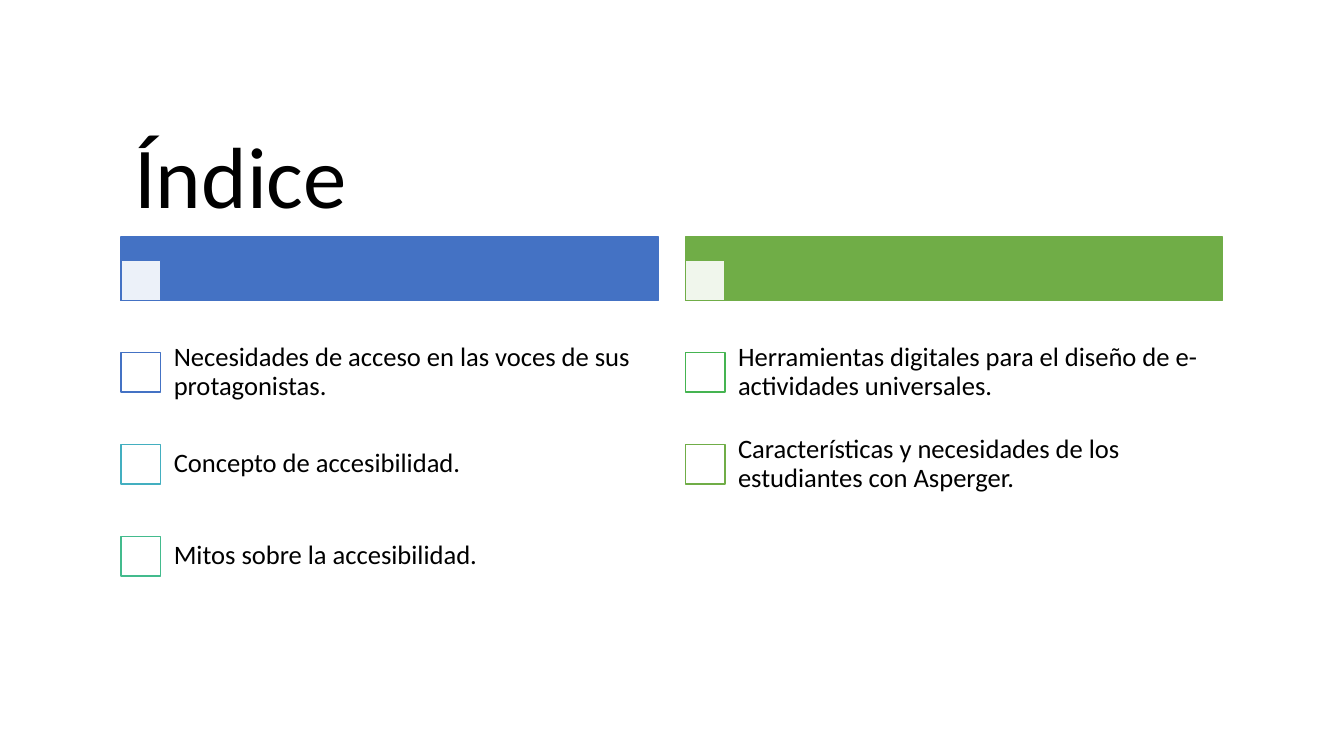
from dataclasses import dataclass

from lxml import etree
from pptx import Presentation
from pptx.dml.color import RGBColor
from pptx.enum import shapes, text
from pptx.oxml import ns
from pptx.util import Cm, Pt


@dataclass(frozen=True)
class Theme:
    font: str = "Calibri"
    title_size: int = 62
    item_size: int = 19
    ink: str = "000000"
    paper: str = "FFFFFF"
    blue: str = "4472C4"
    teal: str = "43AFC0"
    mint: str = "43BB8D"
    leaf: str = "45B451"
    green: str = "70AD47"


class IndexSlide:
    def __init__(self, presentation, theme):
        self.theme = theme
        self.slide = presentation.slides.add_slide(presentation.slide_layouts[5])

    def rectangle(self, left, top, width, height, fill, line, opacity=100):
        shape = self.slide.shapes.add_shape(
            shapes.MSO_SHAPE.RECTANGLE, Cm(left), Cm(top), Cm(width), Cm(height))
        shape.shadow.inherit = False
        shape.fill.solid()
        shape.fill.fore_color.rgb = RGBColor.from_string(fill)
        shape.line.color.rgb = RGBColor.from_string(line)
        shape.line.width = Pt(1)
        if opacity < 100:
            color = shape.element.spPr.find(
                ns.qn("a:solidFill") + "/" + ns.qn("a:srgbClr"))
            etree.SubElement(color, ns.qn("a:alpha"), val=str(opacity * 1000))

    def set_text(self, shape, words, size, inset_x, inset_y):
        frame = shape.text_frame
        frame.word_wrap = True
        frame.auto_size = text.MSO_AUTO_SIZE.NONE
        frame.vertical_anchor = text.MSO_ANCHOR.MIDDLE
        frame.margin_left = frame.margin_right = Cm(inset_x)
        frame.margin_top = frame.margin_bottom = Cm(inset_y)
        paragraph = frame.paragraphs[0]
        paragraph.text = words
        paragraph.alignment = text.PP_ALIGN.LEFT
        paragraph.line_spacing = 0.9
        paragraph.font.name = self.theme.font
        paragraph.font.size = Pt(size)
        paragraph.font.color.rgb = RGBColor.from_string(self.theme.ink)

    def title(self, words, left, top, width, height):
        shape = self.slide.shapes.title
        shape.left, shape.top = Cm(left), Cm(top)
        shape.width, shape.height = Cm(width), Cm(height)
        self.set_text(shape, words, self.theme.title_size, 0.33, 0.22)

    def label(self, words, left, top, width, height):
        shape = self.slide.shapes.add_textbox(Cm(left), Cm(top), Cm(width), Cm(height))
        self.set_text(shape, words, self.theme.item_size, 0.38, 0.38)


LEFT, COLUMN_STEP, COLUMN_WIDTH = 3.05, 14.22, 13.54
BAR_TOP, BAR_HEIGHT = 5.97, 1.6
ROWS_TOP, ROW_HEIGHT = 8.22, 2.32
BOX, LABEL_INDENT = 1, 0.95


def main():
    theme = Theme()
    presentation = Presentation()
    presentation.slide_width, presentation.slide_height = Cm(33.87), Cm(19.05)
    index = IndexSlide(presentation, theme)

    # Title
    index.title("Índice", LEFT, 3.12, COLUMN_WIDTH, 2.87)

    # Bar colour and items of each column
    columns = [
        (theme.blue, [
            ("Necesidades de acceso en las voces de sus protagonistas.", theme.blue),
            ("Concepto de accesibilidad.", theme.teal),
            ("Mitos sobre la accesibilidad.", theme.mint),
        ]),
        (theme.green, [
            ("Herramientas digitales para el diseño de e-actividades universales.",
             theme.leaf),
            ("Características y necesidades de los estudiantes con Asperger.",
             theme.green),
        ]),
    ]
    for column, (accent, items) in enumerate(columns):
        left = LEFT + column * COLUMN_STEP

        # Header bar with its translucent box at the bottom left
        index.rectangle(left, BAR_TOP, COLUMN_WIDTH, BAR_HEIGHT, accent, accent)
        index.rectangle(left, BAR_TOP + BAR_HEIGHT - BOX, BOX, BOX,
                        theme.paper, accent, opacity=90)

        # Boxes centred on their rows, with labels
        for row, (words, outline) in enumerate(items):
            top = ROWS_TOP + row * ROW_HEIGHT
            index.rectangle(left, top + (ROW_HEIGHT - BOX) / 2, BOX, BOX,
                            theme.paper, outline)
            index.label(words, left + LABEL_INDENT, top,
                        COLUMN_WIDTH - LABEL_INDENT, ROW_HEIGHT)

    presentation.save("out.pptx")


if __name__ == "__main__":
    main()
